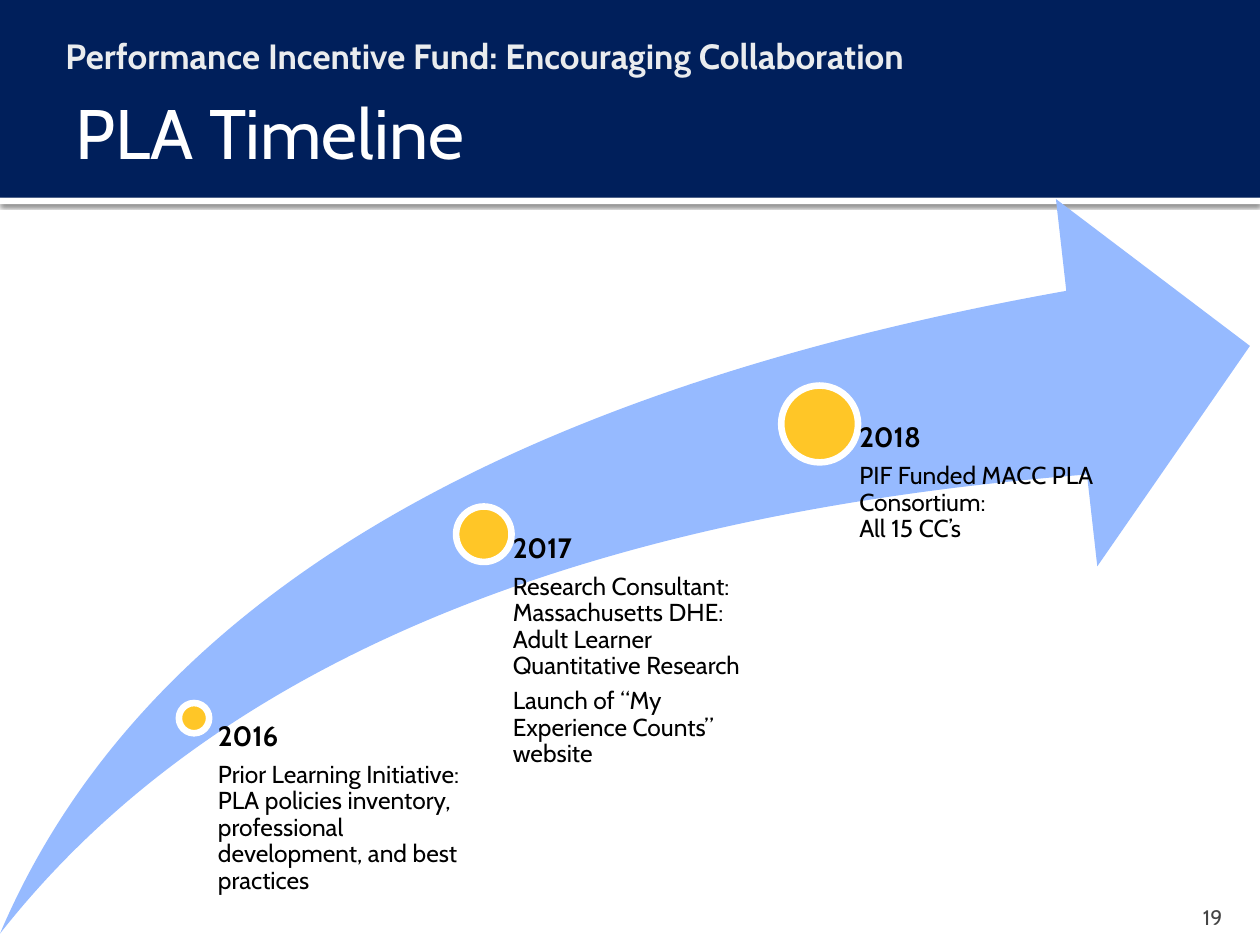
from dataclasses import dataclass

from lxml.etree import SubElement
from pptx import Presentation
from pptx.dml.color import RGBColor
from pptx.enum.shapes import MSO_SHAPE as SHAPE
from pptx.enum.text import MSO_ANCHOR as ANCHOR, PP_ALIGN as ALIGN
from pptx.oxml.ns import qn
from pptx.util import Inches, Pt

FONT = "Cabin"
WHITE = RGBColor(0xFF, 0xFF, 0xFF)
BLACK = RGBColor(0, 0, 0)
NAVY = RGBColor(0x00, 0x1F, 0x5B)
PALE = RGBColor(0xEA, 0xEC, 0xEE)
GRAY = RGBColor(0x45, 0x45, 0x45)
SKY = RGBColor(0x96, 0xBA, 0xFF)
GOLD = RGBColor(0xFF, 0xC6, 0x27)
TIMELINE_BOTTOM = 7.41


@dataclass(frozen=True)
class Box:
    left: float
    top: float
    width: float
    height: float

    def emu(self) -> list[int]:
        return [Inches(v) for v in (self.left, self.top, self.width, self.height)]


@dataclass(frozen=True)
class Line:
    text: str
    size: float
    color: RGBColor = BLACK
    bold: bool = False


@dataclass(frozen=True)
class Milestone:
    year: str
    details: tuple[str, ...]
    dot: Box
    left: float
    top: float
    width: float
    inset: float


MILESTONES = (
    Milestone(
        "2016",
        ("Prior Learning Initiative: PLA policies inventory, professional "
         "development, and best practices",),
        Box(1.42, 5.58, 0.24, 0.24), 1.6, 5.73, 2.17, 0.13,
    ),
    Milestone(
        "2017",
        ("Research Consultant: Massachusetts DHE: Adult Learner Quantitative Research",
         "Launch of “My Experience Counts” website"),
        Box(3.62, 4.02, 0.44, 0.44), 3.84, 4.24, 2.24, 0.23,
    ),
    Milestone(
        "2018",
        ("PIF Funded MACC PLA Consortium:\vAll 15 CC’s",),
        Box(6.2, 3.06, 0.61, 0.61), 6.5, 3.36, 2.24, 0.32,
    ),
)


def add_shape(s, kind: SHAPE, box: Box, fill: RGBColor):
    sp = s.shapes.add_shape(kind, *box.emu())
    sp.shadow.inherit = False
    sp.fill.solid()
    sp.fill.fore_color.rgb = fill
    sp.line.fill.background()
    return sp


def add_shadow(sp) -> None:
    effects = sp._element.spPr.find(qn("a:effectLst"))
    shadow = SubElement(
        effects, qn("a:outerShdw"), blurRad=str(Pt(2.5)), dist=str(Pt(0.8)),
        dir="5400000", algn="ctr", rotWithShape="0",
    )
    color = SubElement(shadow, qn("a:srgbClr"), val="000000")
    SubElement(color, qn("a:alpha"), val="60000")


def add_text(s, box: Box, lines: list[Line],
             insets: tuple[float, float, float, float],
             anchor: ANCHOR = ANCHOR.TOP, align: ALIGN = ALIGN.LEFT):
    tf = s.shapes.add_textbox(*box.emu()).text_frame
    tf.word_wrap = True
    tf.vertical_anchor = anchor
    tf.margin_left, tf.margin_top, tf.margin_right, tf.margin_bottom = map(Inches, insets)
    for i, line in enumerate(lines):
        p = tf.paragraphs[0] if i == 0 else tf.add_paragraph()
        p.text = line.text
        p.alignment = align
        p.font.name = FONT
        p.font.size = Pt(line.size)
        p.font.bold = line.bold
        p.font.color.rgb = line.color
    return tf


def add_milestone(s, m: Milestone) -> None:
    dot = add_shape(s, SHAPE.OVAL, m.dot, GOLD)
    dot.line.color.rgb = WHITE
    dot.line.width = Pt(3.78)
    box = Box(m.left, m.top, m.width, TIMELINE_BOTTOM - m.top)
    lines = [Line(m.year, 16, bold=True)] + [Line(d, 14) for d in m.details]
    tf = add_text(s, box, lines, (m.inset, 0, 0, 0))
    for p, line in zip(tf.paragraphs, lines):
        p.line_spacing = 0.9
        p.space_after = Pt(0.35 * line.size)


def main() -> None:
    prs = Presentation()
    prs.slide_width, prs.slide_height = Inches(10), Inches(7.5)
    s = prs.slides.add_slide(prs.slide_layouts[6])

    add_shadow(add_shape(s, SHAPE.RECTANGLE, Box(0, 1.57, 10, 0.05), WHITE))
    add_shape(s, SHAPE.RECTANGLE, Box(0, 0, 10, 1.57), NAVY)
    add_text(s, Box(9, 7.08, 0.8, 0.3), [Line("19", 12, GRAY)],
             (0.1, 0.05, 0.1, 0), ANCHOR.BOTTOM, ALIGN.RIGHT)
    add_text(s, Box(0.33, 0.17, 9.34, 0.5),
             [Line("Performance Incentive Fund: Encouraging Collaboration", 20, PALE, True)],
             (0.19, 0.1, 0.1, 0.05))
    add_text(s, Box(0.5, 0.58, 9.08, 0.92), [Line("PLA Timeline", 40, WHITE)],
             (0.1, 0.05, 0.05, 0.05), ANCHOR.MIDDLE)

    arrow = add_shape(s, SHAPE.SWOOSH_ARROW, Box(0, 1.58, 9.92, 5.83), SKY)
    arrow.adjustments[0] = arrow.adjustments[1] = 0.25
    for m in MILESTONES:
        add_milestone(s, m)

    prs.save("out.pptx")


if __name__ == "__main__":
    main()
